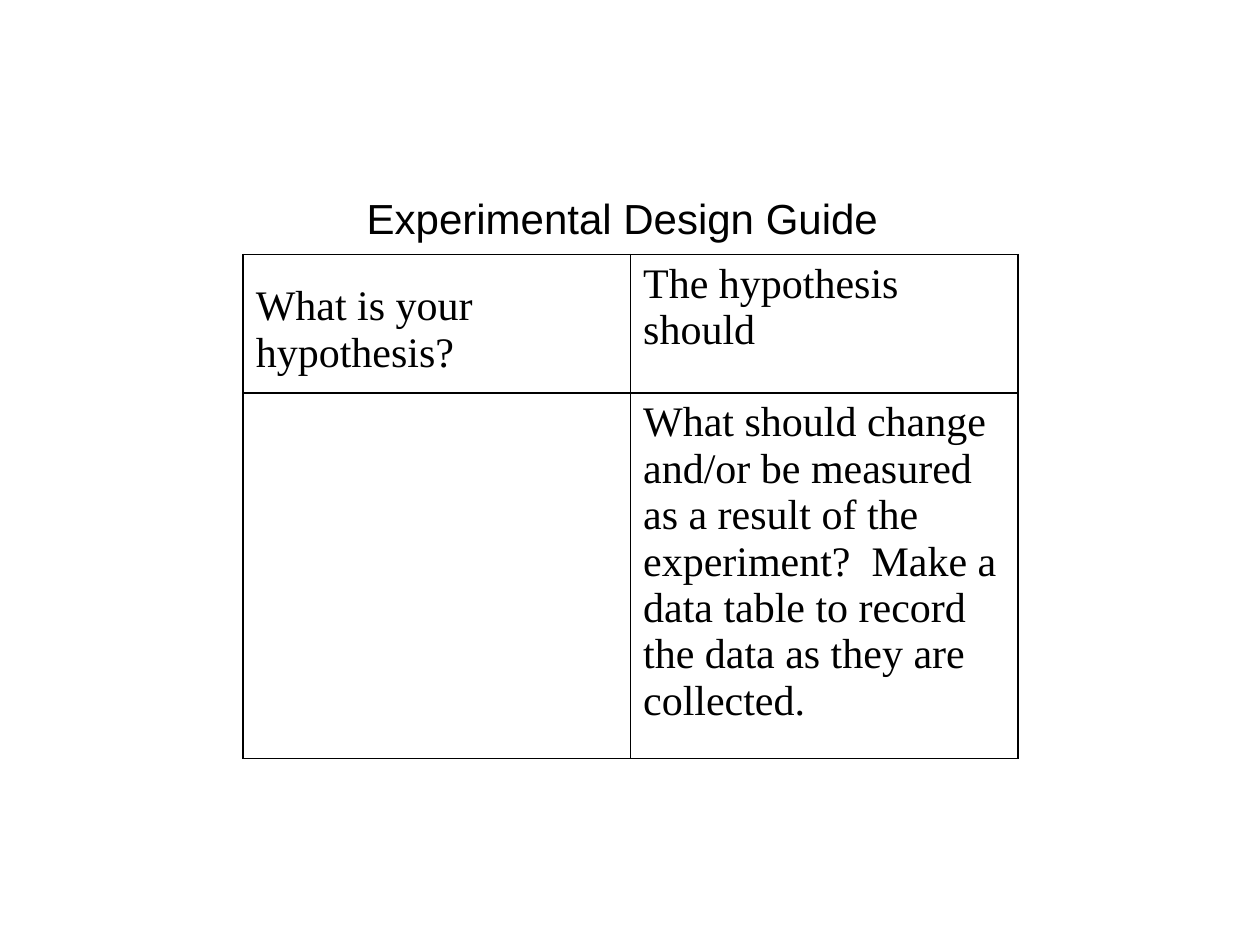
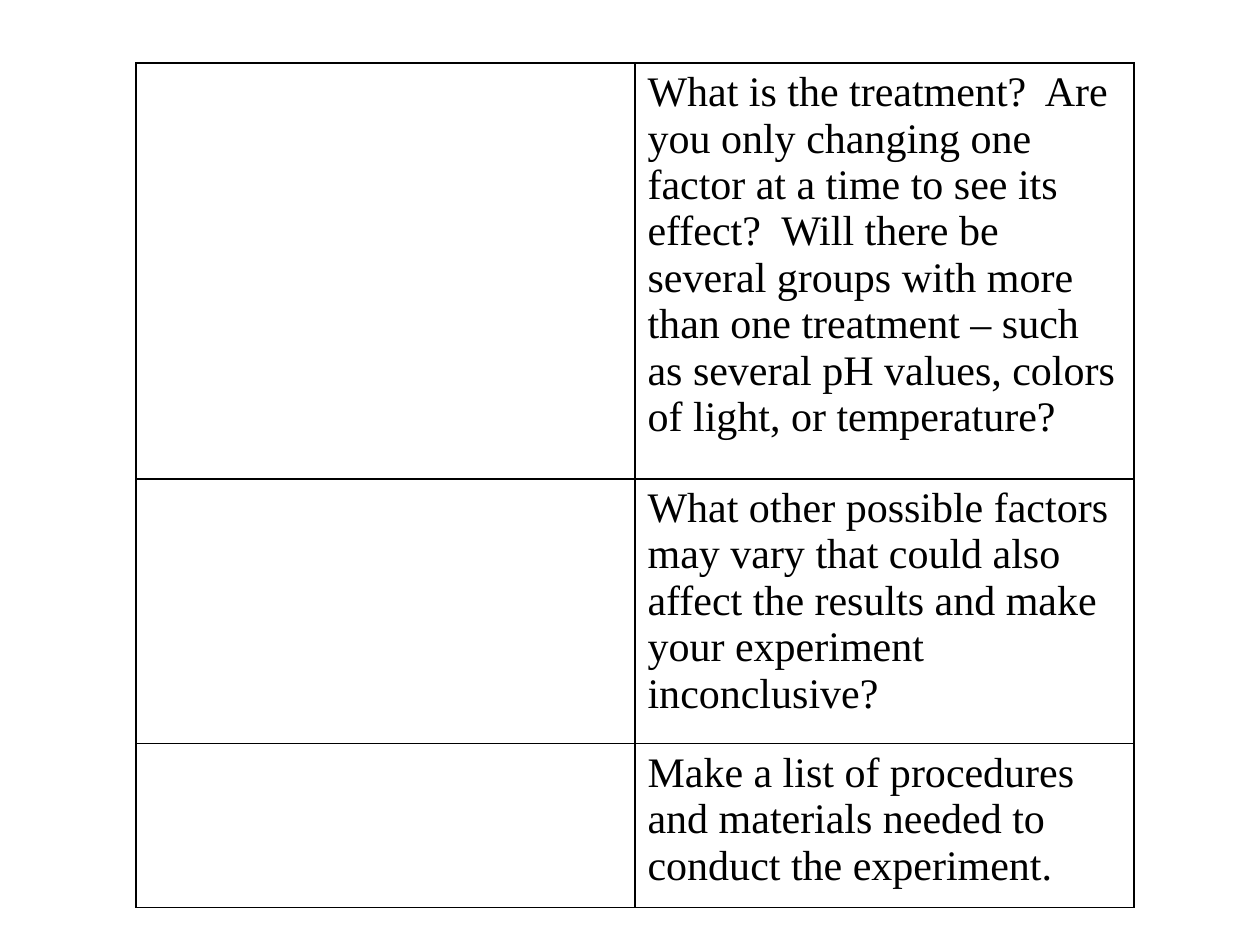
from dataclasses import dataclass

from lxml import etree
from pptx import Presentation
from pptx.dml.color import RGBColor
from pptx.enum.text import MSO_ANCHOR, MSO_AUTO_SIZE, PP_ALIGN
from pptx.oxml.ns import qn
from pptx.slide import Slide
from pptx.table import _Cell
from pptx.util import Inches, Pt

MIDDLE = MSO_ANCHOR.MIDDLE
TOP = MSO_ANCHOR.TOP
FIT_SHAPE = MSO_AUTO_SIZE.SHAPE_TO_FIT_TEXT
CENTER = PP_ALIGN.CENTER

# Shared look
WIDTH, HEIGHT = Inches(10), Inches(7.5)
COLORS = {"text": "000000", "border": "000000", "page": "FFFFFF"}
TITLE_FONT = {"name": "Arial", "size": Pt(24)}
CELL_FONT = {"name": "Times New Roman", "size": Pt(24)}
BORDER_WIDTH = Pt(1)
BORDER_SIDES = ("lnL", "lnR", "lnT", "lnB")


@dataclass(frozen=True)
class Area:
    """Position and size as shares of the slide."""
    left: float
    top: float
    width: float
    height: float

    def lengths(self) -> tuple[int, int, int, int]:
        return (round(self.left * WIDTH), round(self.top * HEIGHT),
                round(self.width * WIDTH), round(self.height * HEIGHT))


@dataclass(frozen=True)
class Entry:
    text: str = ""
    top_margin: float = 0.05


@dataclass(frozen=True)
class GuideTable:
    area: Area
    row_weights: tuple[float, ...]
    rows: tuple[tuple[Entry, Entry], ...]


# Content
TITLE = "Experimental Design Guide"
TITLE_AREA = Area(2.81 / 10, 1.48 / 7.5, 4.26 / 10, 0.5 / 7.5)
BLANK = Entry()

HYPOTHESIS_TABLE = GuideTable(
    Area(1.93 / 10, 2.02 / 7.5, 6.15 / 10, 4 / 7.5),
    (1.1, 2.9),
    (
        (Entry("What is your hypothesis?", top_margin=0.23),
         Entry("The hypothesis should")),
        (BLANK, Entry("What should change and/or be measured as a result of "
                      "the experiment?  Make a data table to record the data "
                      "as they are collected.")),
    ),
)
TREATMENT_TABLE = GuideTable(
    Area(1.08 / 10, 0.5 / 7.5, 7.92 / 10, 6.7 / 7.5),
    (3.3, 2.1, 1.3),
    (
        (BLANK, Entry("What is the treatment?  Are you only changing one "
                      "factor at a time to see its effect?  Will there be "
                      "several groups with more than one treatment – such as "
                      "several pH values, colors of light, or temperature?")),
        (BLANK, Entry("What other possible factors may vary that could also "
                      "affect the results and make your experiment "
                      "inconclusive?")),
        (BLANK, Entry("Make a list of procedures and materials needed to "
                      "conduct the experiment.")),
    ),
)


def set_values(target: object, values: dict) -> None:
    for name, value in values.items():
        setattr(target, name, value)


def write(para, text: str, font: dict) -> None:
    span = para.add_run()
    span.text = text
    set_values(span.font, font)
    span.font.color.rgb = RGBColor.from_string(COLORS["text"])


def add_borders(cell: _Cell) -> None:
    properties = cell._tc.get_or_add_tcPr()
    for side in BORDER_SIDES:
        line = etree.SubElement(properties, qn(f"a:{side}"), w=str(BORDER_WIDTH))
        fill = etree.SubElement(line, qn("a:solidFill"))
        etree.SubElement(fill, qn("a:srgbClr"), val=COLORS["border"])


def fill_cell(cell: _Cell, entry: Entry) -> None:
    set_values(cell, {
        "margin_left": Inches(0.1), "margin_right": Inches(0.1),
        "margin_top": Inches(entry.top_margin), "margin_bottom": Inches(0.05),
        "vertical_anchor": TOP,
    })
    add_borders(cell)
    cell.fill.background()
    if entry.text:
        write(cell.text_frame.paragraphs[0], entry.text, CELL_FONT)


def add_guide_table(page: Slide, guide: GuideTable) -> None:
    columns = len(guide.rows[0])
    left, top, width, height = guide.area.lengths()
    table = page.shapes.add_table(
        len(guide.rows), columns, left, top, width, height).table
    set_values(table, {"first_row": False, "horz_banding": False})
    for column in table.columns:
        column.width = width // columns
    for row, weight in zip(table.rows, guide.row_weights):
        row.height = round(height * weight / sum(guide.row_weights))
    for row, entries in zip(table.rows, guide.rows):
        for cell, entry in zip(row.cells, entries):
            fill_cell(cell, entry)


def add_title(page: Slide, text: str, area: Area) -> None:
    frame = page.shapes.add_textbox(*area.lengths()).text_frame
    set_values(frame, {"word_wrap": False, "auto_size": FIT_SHAPE,
                       "vertical_anchor": MIDDLE})
    para = frame.paragraphs[0]
    para.alignment = CENTER
    write(para, text, TITLE_FONT)


def add_page(deck) -> Slide:
    page = deck.slides.add_slide(deck.slide_layouts[6])
    page.background.fill.solid()
    page.background.fill.fore_color.rgb = RGBColor.from_string(COLORS["page"])
    return page


def main() -> None:
    deck = Presentation()
    set_values(deck, {"slide_width": WIDTH, "slide_height": HEIGHT})

    # Hypothesis and measurements
    hypothesis_page = add_page(deck)
    add_title(hypothesis_page, TITLE, TITLE_AREA)
    add_guide_table(hypothesis_page, HYPOTHESIS_TABLE)

    # Treatment, other factors and procedures
    add_guide_table(add_page(deck), TREATMENT_TABLE)

    deck.save("out.pptx")


if __name__ == "__main__":
    main()
